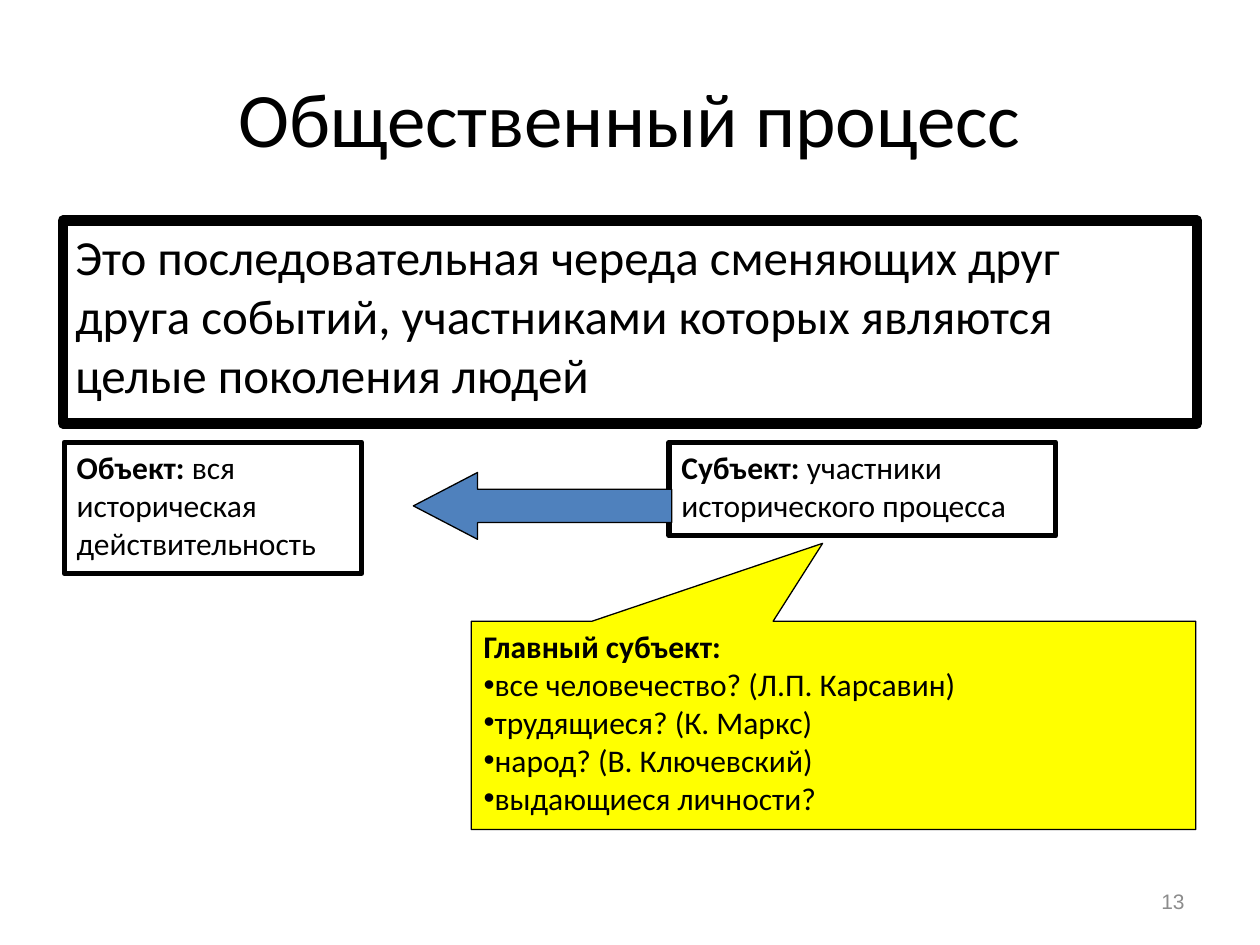
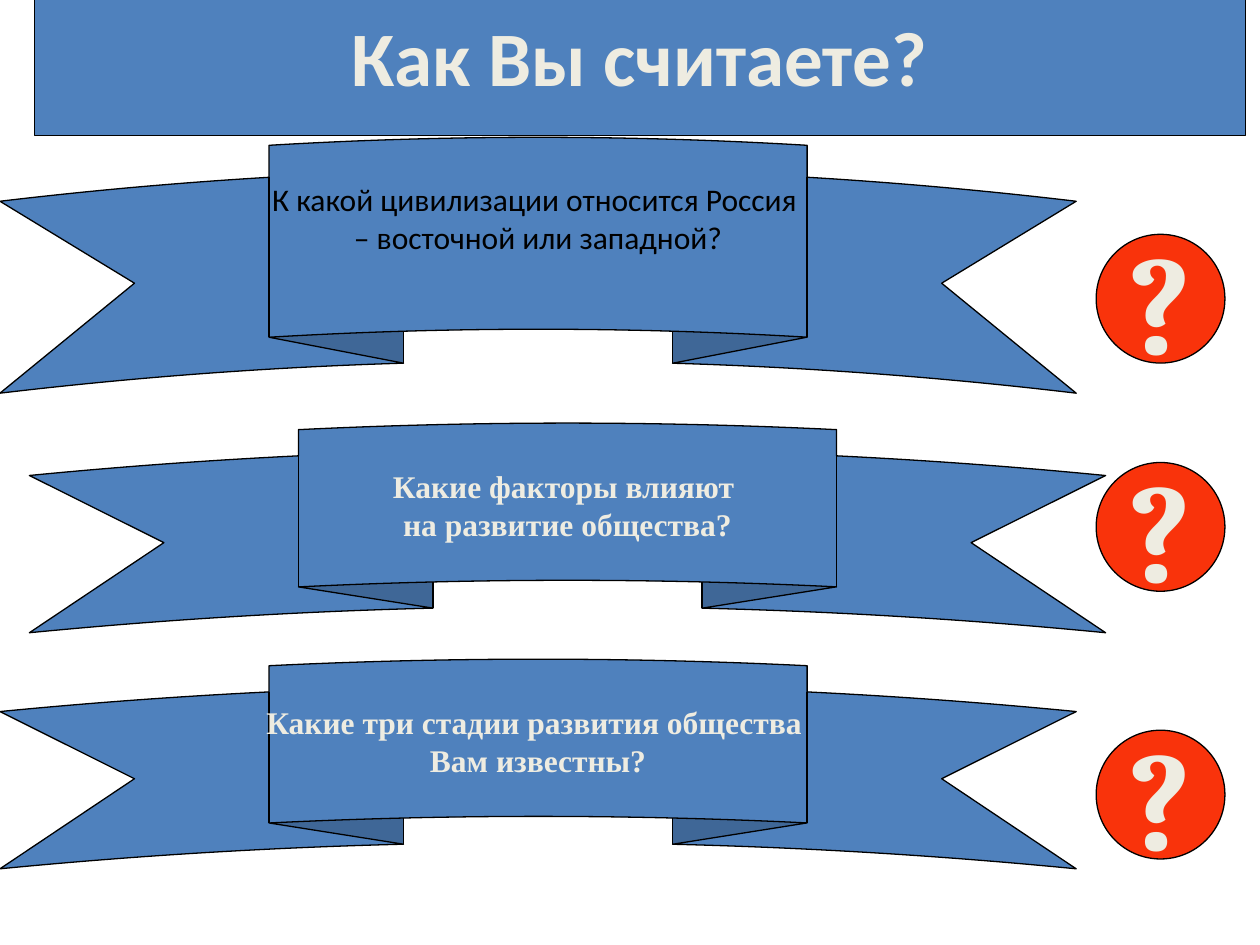
import pptx
import pptx.dml.color
import pptx.enum.shapes
import pptx.enum.text
import pptx.oxml
import pptx.util
from lxml import etree

Pt = pptx.util.Pt
Shape = pptx.enum.shapes.MSO_SHAPE
Align = pptx.enum.text.PP_ALIGN
Anchor = pptx.enum.text.MSO_ANCHOR

BLACK, CREAM, GRAY = "000000", "EEECE1", "8C8C8C"
BLUE, YELLOW, RED = "4F81BD", "FFFF00", "F9330B"
BODY_FONT, RIBBON_FONT, SIGN_FONT, NUMBER_FONT = "Calibri", "Times New Roman", "Cambria", "Arial"
TITLE_ONLY = 5


def color(hex_value):
    return pptx.dml.color.RGBColor.from_string(hex_value)


def paint(shape, fill=None, line_width=0.75):
    if fill:
        shape.fill.solid()
        shape.fill.fore_color.rgb = color(fill)
    else:
        shape.fill.background()
    shape.line.color.rgb = color(BLACK)
    shape.line.width = Pt(line_width)


def place(shape, left, top, width, height):
    shape.left, shape.top = Pt(left), Pt(top)
    shape.width, shape.height = Pt(width), Pt(height)


def add_run(paragraph, text, size, font=BODY_FONT, ink=BLACK, bold=False):
    run = paragraph.add_run()
    run.text = text
    run.font.size = Pt(size)
    run.font.name = font
    run.font.bold = bold
    run.font.color.rgb = color(ink)


def add_bullet(paragraph):
    properties = paragraph._p.get_or_add_pPr()
    properties.set("marL", "0")
    properties.set("indent", "0")
    for tag, key, value in (("a:buFont", "typeface", "Arial"), ("a:buChar", "char", "•")):
        etree.SubElement(properties, pptx.oxml.ns.qn(tag)).set(key, value)


def write_lines(shape, lines, size, align=Align.LEFT, anchor=Anchor.TOP, wrap=True, **style):
    """Write one paragraph per line of text and return the paragraphs."""
    frame = shape.text_frame
    frame.word_wrap = wrap
    frame.vertical_anchor = anchor
    for index, text in enumerate(lines):
        paragraph = frame.add_paragraph() if index else frame.paragraphs[0]
        paragraph.alignment = align
        add_run(paragraph, text, size, **style)
    return frame.paragraphs


def add_figure(slide, kind, box, fill=None, line_width=0.75, adjustments=()):
    shape = slide.shapes.add_shape(kind, *map(Pt, box))
    shape.shadow.inherit = False
    paint(shape, fill, line_width)
    for index, value in enumerate(adjustments):
        shape.adjustments[index] = value
    return shape


def add_title(slide, text, box, **style):
    title = slide.shapes.title
    place(title, *box)
    write_lines(title, [text], 44, Align.CENTER, Anchor.MIDDLE, **style)
    return title


def add_term(slide, box, term, meaning):
    shape = add_figure(slide, Shape.RECTANGLE, box, line_width=3)
    paragraph = write_lines(shape, [term], 18, bold=True)[0]
    add_run(paragraph, meaning, 18)


def add_slide_number(slide, number):
    box = slide.shapes.add_textbox(Pt(516), Pt(500.5), Pt(168), Pt(28.8))
    write_lines(box, [number], 12, Align.RIGHT, Anchor.MIDDLE, font=NUMBER_FONT, ink=GRAY)


def add_question_sign(slide, top):
    sign = add_figure(slide, Shape.OVAL, (626.4, top, 73.6, 73.6), RED)
    write_lines(sign, ["?"], 80, Align.CENTER, Anchor.MIDDLE, wrap=False,
                font=SIGN_FONT, ink=CREAM, bold=True)


def add_ribbon(slide, left, top, height, lines, **style):
    ribbon = add_figure(slide, Shape.CURVED_UP_RIBBON, (left, top, 615, height), BLUE,
                        adjustments=(0.25, 0.5, 0.125))
    write_lines(ribbon, lines, 18, Align.CENTER, Anchor.MIDDLE, wrap=False, **style)
    return ribbon


def build_process_slide(slide):
    add_title(slide, "Общественный процесс", (36, 21.6, 648, 90))
    definition = add_figure(slide, Shape.RECTANGLE, (36, 126, 648, 116), line_width=6)
    write_lines(definition, ["Это последовательная череда сменяющих друг друга событий, "
                             "участниками которых являются целые поколения людей"], 28)
    add_term(slide, (382.3, 252.7, 221, 53.5), "Субъект:", " участники исторического процесса")
    add_term(slide, (36.7, 252.7, 170, 75), "Объект:", " вся историческая действительность")
    add_figure(slide, Shape.LEFT_ARROW, (236.2, 270, 147.6, 38.2), BLUE, adjustments=(0.5, 0.96))
    callout = add_figure(slide, Shape.RECTANGULAR_CALLOUT, (269.3, 355, 414, 119), YELLOW,
                         adjustments=(-0.015, -0.874))
    paragraphs = write_lines(callout, [
        "Главный субъект:",
        "все человечество? (Л.П. Карсавин)",
        "трудящиеся? (К. Маркс)",
        "народ? (В. Ключевский)",
        "выдающиеся личности?",
    ], 18)
    paragraphs[0].runs[0].font.bold = True
    for paragraph in paragraphs[1:]:
        add_bullet(paragraph)
    add_slide_number(slide, "13")


def build_question_slide(slide):
    title = add_title(slide, "Как Вы считаете?", (19.6, -13.7, 692, 91), ink=CREAM, bold=True)
    paint(title, BLUE)
    for top in (133.9, 264.3, 417.3):
        add_question_sign(slide, top)
    civilization = add_ribbon(slide, 0, 78.5, 146.2, [
        "К какой цивилизации относится Россия ", "– восточной или западной?"])
    civilization.text_frame.margin_bottom = Pt(25.6)
    serif = {"font": RIBBON_FONT, "ink": CREAM, "bold": True}
    add_ribbon(slide, 0, 376.7, 119.8,
               ["Какие три стадии развития общества ", "Вам известны?"], **serif)
    add_ribbon(slide, 16.8, 241.8, 119.8,
               ["Какие факторы влияют ", "на развитие общества?"], **serif)


def main():
    presentation = pptx.Presentation()
    presentation.slide_width, presentation.slide_height = Pt(720), Pt(540)
    layout = presentation.slide_layouts[TITLE_ONLY]
    for build in (build_process_slide, build_question_slide):
        build(presentation.slides.add_slide(layout))
    presentation.save("out.pptx")


if __name__ == "__main__":
    main()
